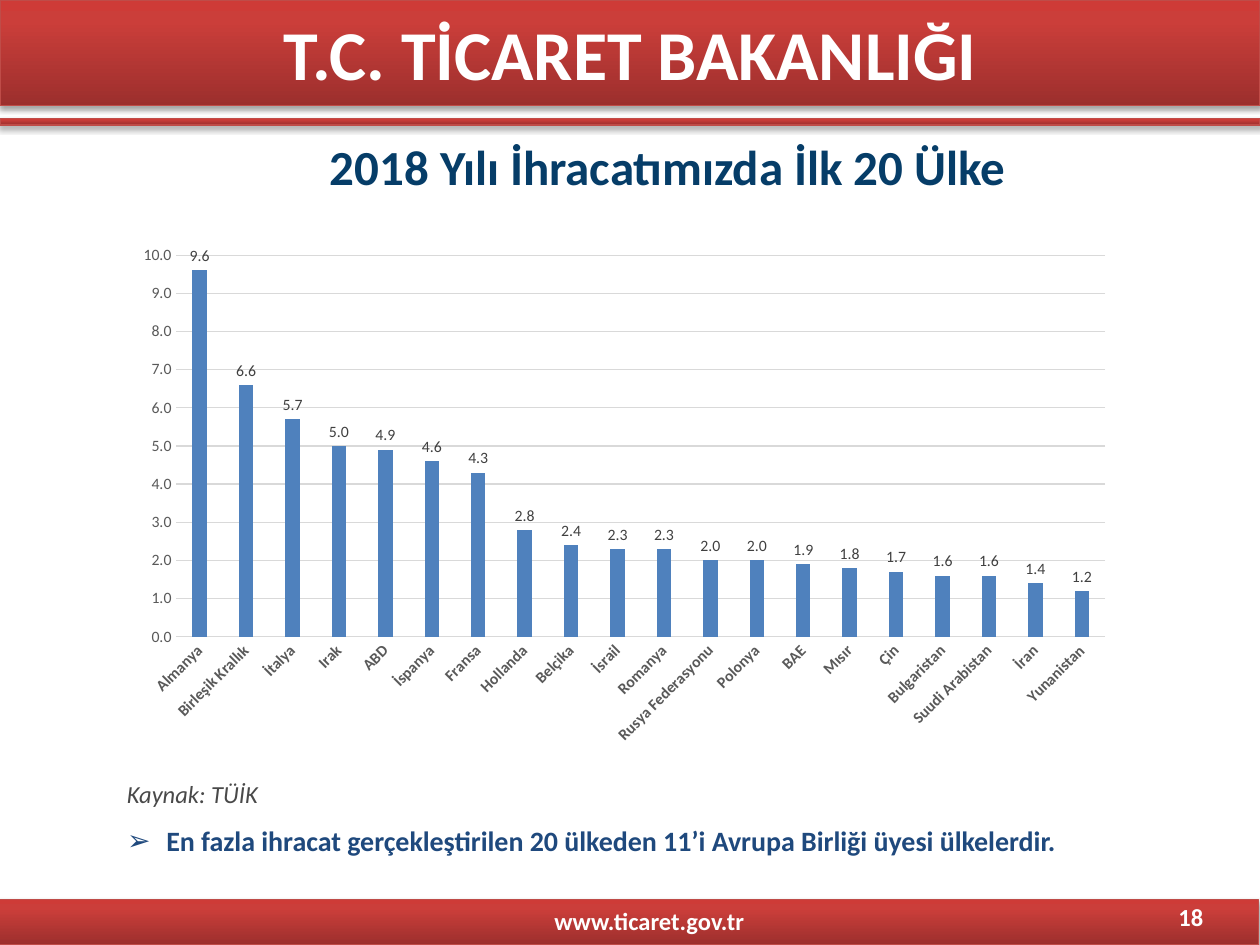
import copy

import pptx
import pptx.chart.data
import pptx.dml.color
import pptx.enum.chart
import pptx.enum.shapes
import pptx.enum.text
import pptx.oxml
import pptx.oxml.ns
import pptx.util
from pptx.util import Cm, Pt

RGB = pptx.dml.color.RGBColor
ALIGN = pptx.enum.text.PP_ALIGN
ANCHOR = pptx.enum.text.MSO_ANCHOR
XL = pptx.enum.chart

WHITE = RGB(0xFF, 0xFF, 0xFF)
RED_DARK = RGB(0x9C, 0x2F, 0x2D)
RED_MID = RGB(0xCB, 0x3E, 0x3A)
RED_LIGHT = RGB(0xCE, 0x3B, 0x37)
RED_LINE = RGB(0xBF, 0x4C, 0x48)
NAVY = RGB(0x06, 0x3D, 0x68)
BLUE = RGB(0x1F, 0x49, 0x7D)
BAR_BLUE = RGB(0x4F, 0x81, 0xBD)
SOURCE_GREY = RGB(0x49, 0x49, 0x49)
AXIS_GREY = RGB(0x59, 0x59, 0x59)
LABEL_GREY = RGB(0x40, 0x40, 0x40)
GRID_GREY = RGB(0xD9, 0xD9, 0xD9)

EXPORTS = {
    "Almanya": 9.6, "Birleşik Krallık": 6.6, "İtalya": 5.7, "Irak": 5.0,
    "ABD": 4.9, "İspanya": 4.6, "Fransa": 4.3, "Hollanda": 2.8,
    "Belçika": 2.4, "İsrail": 2.3, "Romanya": 2.3, "Rusya Federasyonu": 2.0,
    "Polonya": 2.0, "BAE": 1.9, "Mısır": 1.8, "Çin": 1.7,
    "Bulgaristan": 1.6, "Suudi Arabistan": 1.6, "İran": 1.4, "Yunanistan": 1.2,
}


def set_font(font, color, **formats):
    for name, value in {"name": "Calibri", **formats}.items():
        setattr(font, name, value)
    font.color.rgb = color


def set_line(line, color):
    line.color.rgb = color
    line.width = Pt(0.75)


def put_text(sp, text, size, color, align=ALIGN.LEFT, anchor=ANCHOR.MIDDLE, **formats):
    tf = sp.text_frame
    settings = {"word_wrap": True, "vertical_anchor": anchor,
                "auto_size": pptx.enum.text.MSO_AUTO_SIZE.NONE}
    for name, value in settings.items():
        setattr(tf, name, value)
    p = tf.paragraphs[0]
    p.alignment = align
    p.space_before = Pt(0)
    r = p.add_run()
    r.text = text
    set_font(r.font, color, size=Pt(size), **formats)
    return p


def place(sp, *box):
    for name, value in zip(("left", "top", "width", "height"), box):
        setattr(sp, name, Cm(value))
    return sp


def add_box(s, *box):
    return s.shapes.add_textbox(*map(Cm, box))


def add_band(s, *box):
    """Red gradient band with a soft shadow below it."""
    sp = s.shapes.add_shape(pptx.enum.shapes.MSO_SHAPE.RECTANGLE, *map(Cm, box))
    sp.fill.gradient()
    sp.fill.gradient_angle = 90
    gs_list = sp._element.spPr.find(".//" + pptx.oxml.ns.qn("a:gsLst"))
    gs_list.append(copy.deepcopy(gs_list[-1]))
    stops = ((0, RED_DARK), (0.8, RED_MID), (1, RED_LIGHT))
    for stop, (position, color) in zip(sp.fill.gradient_stops, stops):
        stop.position = position
        stop.color.rgb = color
    set_line(sp.line, RED_LINE)
    sp.shadow.inherit = False
    effects = sp._element.spPr.find(pptx.oxml.ns.qn("a:effectLst"))
    effects.append(pptx.oxml.parse_xml(
        f'<a:outerShdw {pptx.oxml.ns.nsdecls("a")} blurRad="{Pt(3.1)}" '
        f'dist="{Pt(1.8)}" dir="5400000" rotWithShape="0">'
        '<a:srgbClr val="000000"><a:alpha val="35000"/></a:srgbClr></a:outerShdw>'))
    return sp


def add_bullet(p, char, indent):
    pPr = p._p.get_or_add_pPr()
    pPr.set("marL", str(Cm(indent)))
    pPr.set("indent", str(-Cm(indent)))
    pPr.append(pptx.oxml.parse_xml(
        f'<a:buChar {pptx.oxml.ns.nsdecls("a")} char="{char}"/>'))


def add_export_chart(s, *box):
    data = pptx.chart.data.CategoryChartData(number_format="0.0")
    data.categories = list(EXPORTS)
    data.add_series("Series 1", list(EXPORTS.values()))
    chart = s.shapes.add_chart(
        XL.XL_CHART_TYPE.COLUMN_CLUSTERED, *map(Cm, box), data).chart
    chart.has_legend = False
    chart.has_title = False
    set_font(chart.font, AXIS_GREY, size=Pt(10))

    # Columns and value labels
    plot = chart.plots[0]
    for name, value in {"gap_width": 219, "overlap": -27,
                        "vary_by_categories": False, "has_data_labels": True}.items():
        setattr(plot, name, value)
    fill = plot.series[0].format.fill
    fill.solid()
    fill.fore_color.rgb = BAR_BLUE
    labels = plot.data_labels
    for name, value in {"show_value": True, "number_format": "0.0",
                        "number_format_is_linked": False,
                        "position": XL.XL_LABEL_POSITION.OUTSIDE_END}.items():
        setattr(labels, name, value)
    set_font(labels.font, LABEL_GREY, size=Pt(9))

    # Axes
    countries, values = chart.category_axis, chart.value_axis
    for axis, bold in ((countries, True), (values, False)):
        axis.major_tick_mark = axis.minor_tick_mark = XL.XL_TICK_MARK.NONE
        set_font(axis.tick_labels.font, AXIS_GREY, size=Pt(9), bold=bold)
    set_line(countries.format.line, GRID_GREY)
    body = countries._element.find(".//" + pptx.oxml.ns.qn("a:bodyPr"))
    body.set("rot", "-2700000")
    body.set("vert", "horz")
    for name, value in {"minimum_scale": 0, "maximum_scale": 10, "major_unit": 1}.items():
        setattr(values, name, value)
    values.tick_labels.number_format = "0.0"
    values.tick_labels.number_format_is_linked = False
    values.format.line.fill.background()
    set_line(values.major_gridlines.format.line, GRID_GREY)


def main():
    prs = pptx.Presentation()
    prs.slide_width, prs.slide_height = Cm(25.4), Cm(19.05)
    s = prs.slides.add_slide(prs.slide_layouts[1])

    # Header and footer bands
    header = add_band(s, 0, 0, 25.4, 2.13)
    put_text(header, "T.C. TİCARET BAKANLIĞI", 40, WHITE, ALIGN.CENTER, bold=True)
    add_band(s, 0, 2.39, 25.4, 0.13)
    add_band(s, -0.03, 18.14, 25.4, 0.91)
    put_text(add_box(s, 10.13, 18.14, 5.92, 0.86), "www.ticaret.gov.tr", 14, WHITE,
             ALIGN.CENTER, bold=True)
    put_text(add_box(s, 18.59, 18.06, 5.92, 0.86), "18", 14, WHITE,
             ALIGN.RIGHT, bold=True)

    # Title
    title = place(s.shapes.title, 1.42, 2.92, 19.1, 0.86)
    put_text(title, "2018 Yılı İhracatımızda İlk 20 Ülke", 28, NAVY,
             ALIGN.RIGHT, bold=True)

    # Chart with its source
    add_export_chart(s, 2.49, 4.75, 20.19, 10.46)
    put_text(add_box(s, 2.31, 15.57, 4.8, 0.86), "Kaynak: TÜİK", 14, SOURCE_GREY,
             anchor=ANCHOR.TOP, italic=True)

    # Conclusion
    body = place(s.placeholders[1], 2.31, 16.48, 19.99, 0.94)
    p = put_text(
        body, "En fazla ihracat gerçekleştirilen 20 ülkeden 11’i Avrupa Birliği üyesi ülkelerdir.",
        16, BLUE, anchor=ANCHOR.TOP, bold=True)
    add_bullet(p, "➢", 0.79)

    prs.save("out.pptx")


if __name__ == "__main__":
    main()
